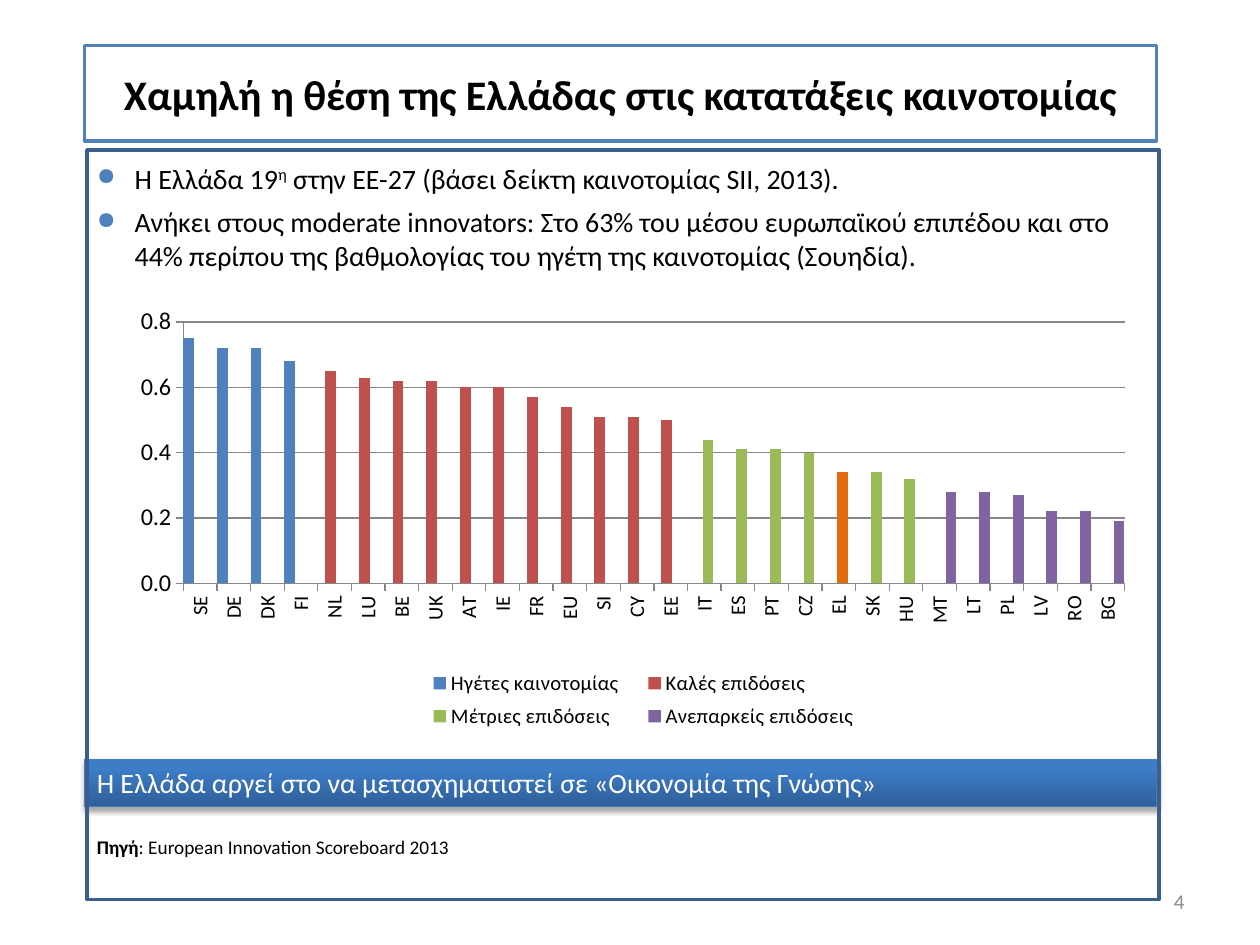
import dataclasses

import pptx
import pptx.chart.data
import pptx.dml.color
import pptx.enum.chart
import pptx.enum.dml
import pptx.enum.shapes
import pptx.enum.text
import pptx.oxml
import pptx.oxml.ns
import pptx.util

Inches = pptx.util.Inches
Pt = pptx.util.Pt
qn = pptx.oxml.ns.qn
RGB = pptx.dml.color.RGBColor.from_string
PP_ALIGN = pptx.enum.text.PP_ALIGN
ANCHOR = pptx.enum.text.MSO_ANCHOR


@dataclasses.dataclass(frozen=True)
class Theme:
    font: str = "Calibri"
    text: str = "000000"
    white: str = "FFFFFF"
    muted: str = "8C8C8C"
    accent: str = "4F81BD"
    frame: str = "3A5F8C"
    band_line: str = "4B7EBC"
    band_dark: str = "2F5F99"
    band_light: str = "3D7CC7"
    grid: str = "878787"
    greece: str = "E46C0A"
    title_size: float = 24
    body_size: float = 16
    value_size: float = 13.8
    label_size: float = 11.8
    number_size: float = 12
    source_size: float = 11


T = Theme()

GROUPS = [
    ("Ηγέτες καινοτομίας", "4F81BD",
     {"SE": 0.75, "DE": 0.72, "DK": 0.72, "FI": 0.68}),
    ("Καλές επιδόσεις", "C0504D",
     {"NL": 0.65, "LU": 0.63, "BE": 0.62, "UK": 0.62, "AT": 0.6, "IE": 0.6,
      "FR": 0.57, "EU": 0.54, "SI": 0.51, "CY": 0.51, "EE": 0.5}),
    ("Μέτριες επιδόσεις", "9BBB59",
     {"IT": 0.44, "ES": 0.41, "PT": 0.41, "CZ": 0.4, "EL": 0.34, "SK": 0.34, "HU": 0.32}),
    ("Ανεπαρκείς επιδόσεις", "8064A2",
     {"MT": 0.28, "LT": 0.28, "PL": 0.27, "LV": 0.22, "RO": 0.22, "BG": 0.19}),
]

BULLETS = [
    [("Η Ελλάδα 19", False), ("η", True),
     (" στην ΕΕ-27 (βάσει δείκτη καινοτομίας SII, 2013).", False)],
    [("Ανήκει στους moderate innovators: Στο 63% του μέσου ευρωπαϊκού επιπέδου "
      "και στο 44% περίπου της βαθμολογίας του ηγέτη της καινοτομίας (Σουηδία).", False)],
]


def xml(tag, body, attrs=""):
    ns = pptx.oxml.ns.nsdecls("a", "c")
    return pptx.oxml.parse_xml(f"<{tag} {ns} {attrs}>{body}</{tag}>")


def style(font, size, color=T.text, bold=False):
    font.name, font.size, font.bold = T.font, Pt(size), bold
    font.color.rgb = RGB(color)


def outline(line, color, width):
    line.color.rgb = RGB(color)
    line.width = Pt(width)


def add_rect(s, box):
    sp = s.shapes.add_shape(pptx.enum.shapes.MSO_SHAPE.RECTANGLE, *box)
    sp.shadow.inherit = False
    return sp


def add_title(s, box):
    sp = s.shapes.title
    sp.left, sp.top, sp.width, sp.height = box
    sp.fill.solid()
    sp.fill.fore_color.rgb = RGB(T.white)
    outline(sp.line, T.accent, 2)
    tf = sp.text_frame
    tf.text = "Χαμηλή η θέση της Ελλάδας στις κατατάξεις καινοτομίας"
    tf.vertical_anchor = ANCHOR.MIDDLE
    p = tf.paragraphs[0]
    p.alignment = PP_ALIGN.CENTER
    style(p.font, T.title_size, bold=True)


def add_bullets(s, box):
    sp = add_rect(s, box)
    sp.fill.solid()
    sp.fill.fore_color.rgb = RGB(T.white)
    sp.line.fill.background()
    tf = sp.text_frame
    tf.vertical_anchor = ANCHOR.TOP
    for i, runs in enumerate(BULLETS):
        p = tf.add_paragraph() if i else tf.paragraphs[0]
        p.alignment = PP_ALIGN.LEFT
        p.space_before = Pt(5.8)
        style(p.font, T.body_size)
        pPr = p._p.get_or_add_pPr()
        pPr.set("marL", str(Inches(0.3)))
        pPr.set("indent", str(Inches(-0.3)))
        marks = [xml("a:buClr", f'<a:srgbClr val="{T.accent}"/>'),
                 xml("a:buSzPct", "", 'val="85000"'),
                 xml("a:buChar", "", 'char="●"')]
        for j, mark in enumerate(marks):
            pPr.insert(1 + j, mark)
        for text, raised in runs:
            r = p.add_run()
            r.text = text
            if raised:
                r.font._element.set("baseline", "30000")


def set_layout(parent, index, x, y, w, h, inner=False):
    for old in parent.findall(qn("c:layout")):
        parent.remove(old)
    target = '<c:layoutTarget val="inner"/>' if inner else ""
    parent.insert(index, xml("c:layout", (
        f'<c:manualLayout>{target}<c:xMode val="edge"/><c:yMode val="edge"/>'
        f'<c:x val="{x}"/><c:y val="{y}"/><c:w val="{w}"/><c:h val="{h}"/></c:manualLayout>')))


def add_ranking_chart(s, box):
    data = pptx.chart.data.CategoryChartData(number_format="0.00")
    data.categories = [c for _, _, scores in GROUPS for c in scores]
    labels = [c.label for c in data.categories]
    for name, _, scores in GROUPS:
        data.add_series(name, [scores.get(c) for c in labels])
    kind = pptx.enum.chart.XL_CHART_TYPE.COLUMN_CLUSTERED
    chart = s.shapes.add_chart(kind, *box, data).chart
    chart.has_title = False
    style(chart.font, T.label_size)

    plot = chart.plots[0]
    plot.vary_by_categories = False
    plot.gap_width, plot.overlap = 0, 30
    for series, (_, color, _) in zip(plot.series, GROUPS):
        series.format.fill.solid()
        series.format.fill.fore_color.rgb = RGB(color)
    fill = plot.series[2].points[labels.index("EL")].format.fill
    fill.solid()
    fill.fore_color.rgb = RGB(T.greece)

    cat, val = chart.category_axis, chart.value_axis
    val.minimum_scale, val.maximum_scale, val.major_unit = 0, 0.8, 0.2
    val.tick_labels.number_format = "0.0"
    val.tick_labels.number_format_is_linked = False
    for axis, size in ((cat, T.label_size), (val, T.value_size)):
        style(axis.tick_labels.font, size)
        axis.major_tick_mark = pptx.enum.chart.XL_TICK_MARK.OUTSIDE
        outline(axis.format.line, T.grid, 0.75)
    outline(val.major_gridlines.format.line, T.grid, 0.75)
    cat._element.find(qn("c:txPr")).find(qn("a:bodyPr")).set("rot", "-5400000")

    chart.has_legend = True
    legend = chart.legend
    legend.position = pptx.enum.chart.XL_LEGEND_POSITION.BOTTOM
    legend.include_in_layout = False
    style(legend.font, T.label_size)
    set_layout(legend._element, 1, 0.29, 0.69, 0.45, 0.13)
    plot_area = chart._chartSpace.chart.plotArea
    set_layout(plot_area, 0, 0.07, 0.09, 0.91, 0.46, inner=True)


def add_source(s, box):
    tf = s.shapes.add_textbox(*box).text_frame
    tf.word_wrap = True
    p = tf.paragraphs[0]
    style(p.font, T.source_size)
    for text, bold in (("Πηγή", True), (": European Innovation Scoreboard 2013", False)):
        r = p.add_run()
        r.text, r.font.bold = text, bold


def add_conclusion(s, box):
    sp = add_rect(s, box)
    sp.fill.gradient()
    sp.fill.gradient_angle = 90
    stops = ((0, T.band_dark), (0.8, T.band_light))
    for stop, (position, color) in zip(sp.fill.gradient_stops, stops):
        stop.position = position
        stop.color.rgb = RGB(color)
    outline(sp.line, T.band_line, 0.75)
    sp._element.spPr.find(qn("a:effectLst")).append(xml(
        "a:outerShdw", '<a:srgbClr val="000000"><a:alpha val="35000"/></a:srgbClr>',
        f'blurRad="{Pt(3.1)}" dist="{Pt(1.8)}" dir="5400000" rotWithShape="0"'))
    tf = sp.text_frame
    tf.text = "Η Ελλάδα αργεί στο να μετασχηματιστεί σε «Οικονομία της Γνώσης»"
    tf.vertical_anchor = ANCHOR.TOP
    p = tf.paragraphs[0]
    p.alignment = PP_ALIGN.LEFT
    style(p.font, T.body_size, T.white)


def add_page_number(s, box):
    tf = s.shapes.add_textbox(*box).text_frame
    tf.word_wrap = True
    tf.text = "4"
    tf.vertical_anchor = ANCHOR.MIDDLE
    p = tf.paragraphs[0]
    p.alignment = PP_ALIGN.RIGHT
    style(p.font, T.number_size, T.muted)


def add_frame(s, box):
    sp = add_rect(s, box)
    sp.fill.background()
    outline(sp.line, T.frame, 2)


def main():
    prs = pptx.Presentation()
    prs.slide_width, prs.slide_height = Inches(10), Inches(7.5)
    s = prs.slides.add_slide(prs.slide_layouts[5])
    regions = [
        (add_bullets, (0.67, 1.23, 8.51, 0.99)),
        (add_title, (0.67, 0.36, 8.51, 0.76)),
        (add_ranking_chart, (0.88, 2.15, 8.21, 4.51)),
        (add_source, (0.67, 6.58, 3.15, 0.29)),
        (add_conclusion, (0.67, 6.03, 8.51, 0.37)),
        (add_page_number, (7.17, 6.95, 2.33, 0.4)),
        (add_frame, (0.69, 1.19, 8.51, 5.95)),
    ]
    for add_region, box in regions:
        add_region(s, [Inches(v) for v in box])
    prs.save("out.pptx")


if __name__ == "__main__":
    main()
